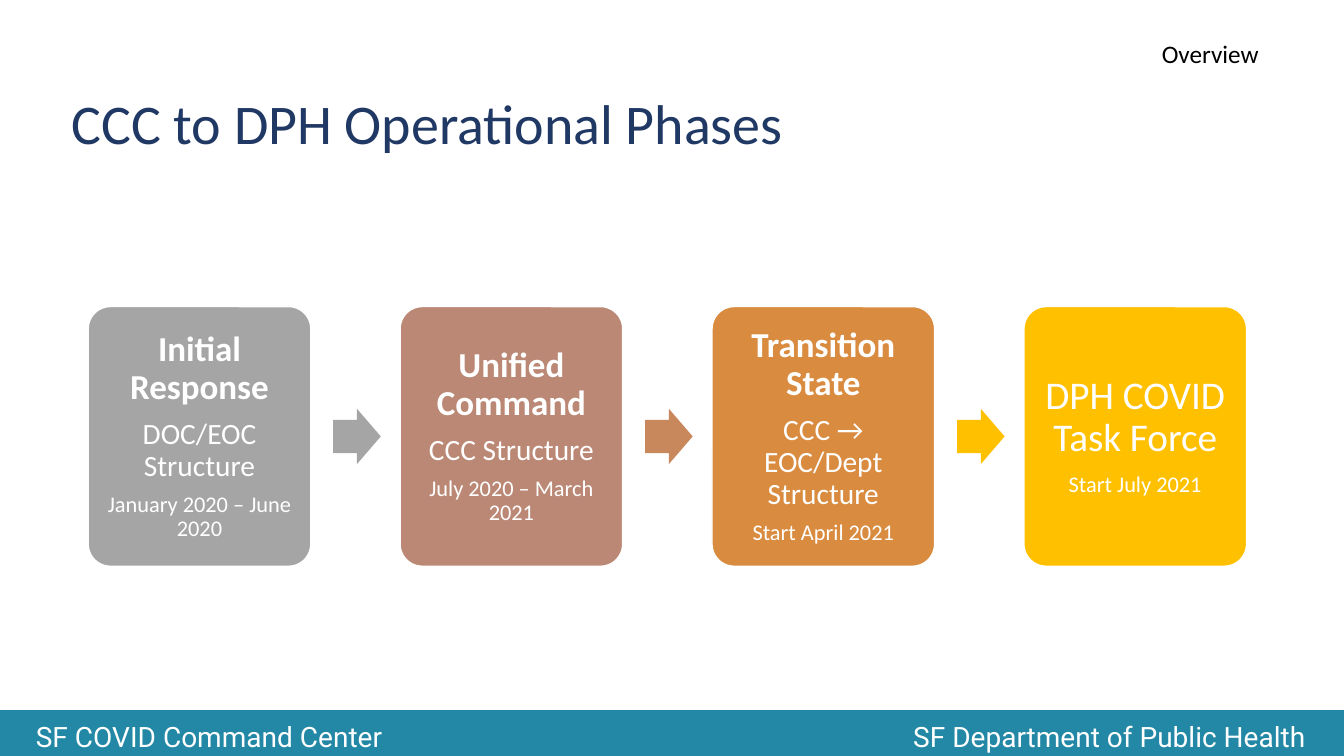
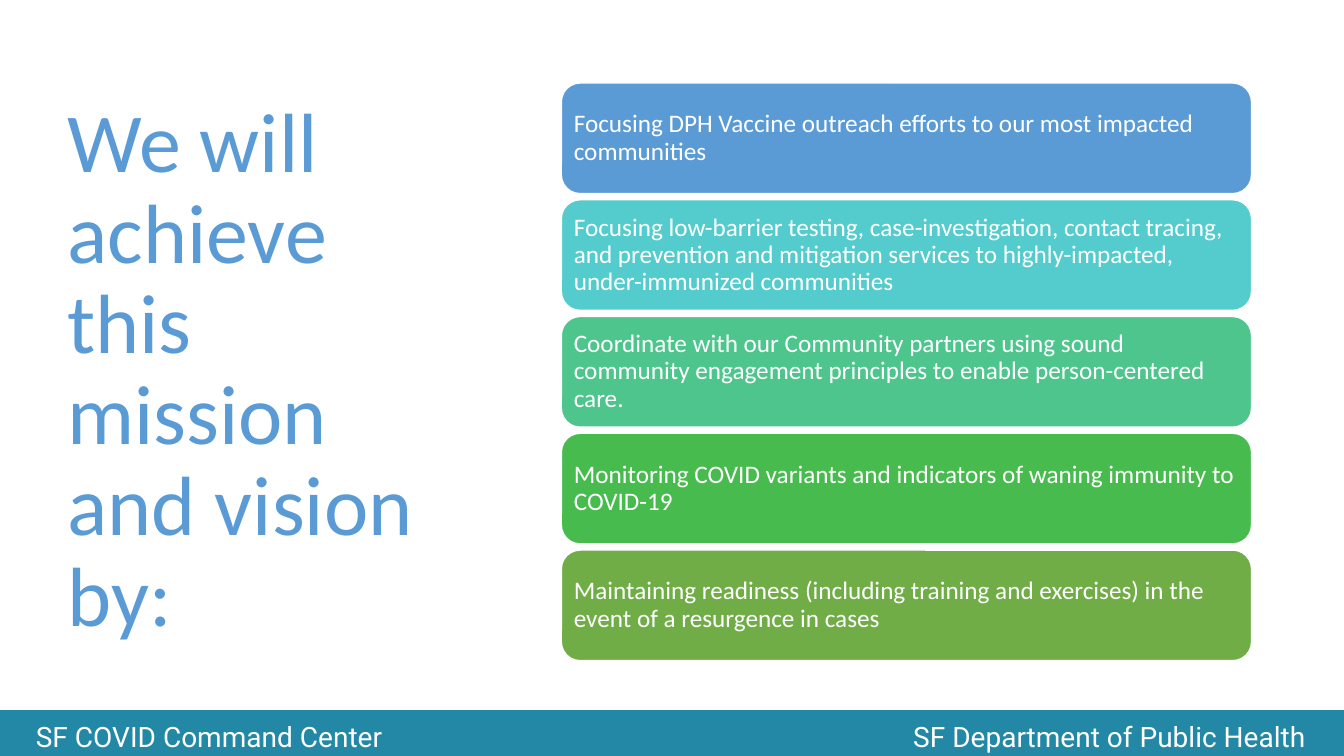
from lxml import etree
from pptx import Presentation
from pptx.dml.color import RGBColor
from pptx.enum.shapes import MSO_SHAPE as Preset
from pptx.enum.text import MSO_ANCHOR as Anchor, MSO_AUTO_SIZE as AutoSize, PP_ALIGN as Align
from pptx.oxml.ns import qn
from pptx.util import Pt

WHITE = RGBColor(0xFF, 0xFF, 0xFF)
BLACK = RGBColor(0x00, 0x00, 0x00)
NAVY = RGBColor(0x20, 0x38, 0x64)
TEAL = RGBColor(0x22, 0x88, 0xA5)
GRAY = RGBColor(0xA5, 0xA5, 0xA5)
ROSE = RGBColor(0xBB, 0x88, 0x76)
COPPER = RGBColor(0xC9, 0x87, 0x5C)
ORANGE = RGBColor(0xD9, 0x8B, 0x3F)
GOLD = RGBColor(0xFF, 0xC0, 0x00)
BLUE = RGBColor(0x5B, 0x9B, 0xD5)
AQUA = RGBColor(0x54, 0xCC, 0xCD)
MINT = RGBColor(0x4D, 0xC5, 0x8D)
GREEN = RGBColor(0x48, 0xBB, 0x4F)
OLIVE = RGBColor(0x70, 0xAD, 0x47)

TITLE_ONLY = 5

# Each phase: fill, colour of the arrow that follows, inset, (text, size, bold) lines
PHASES = [
    (GRAY, GRAY, 7.2, [("Initial Response", 25, True), ("DOC/EOC Structure", 21, False),
                       ("January 2020 – June 2020", 16, False)]),
    (ROSE, COPPER, 7.2, [("Unified Command", 25, True), ("CCC Structure", 21, False),
                         ("July 2020 – March 2021", 16, False)]),
    (ORANGE, GOLD, 7.2, [("Transition State", 25, True), ("CCC → EOC/Dept Structure", 21, False),
                         ("Start April 2021", 16, False)]),
    (GOLD, None, 8.6, [("DPH COVID Task Force", 28, False), ("Start July 2021", 16, False)]),
]

ACTIONS = [
    (BLUE, "Focusing DPH Vaccine outreach efforts to our most impacted communities"),
    (AQUA, "Focusing low-barrier testing, case-investigation, contact tracing, and prevention "
           "and mitigation services to highly-impacted, under-immunized communities"),
    (MINT, "Coordinate with our Community partners using sound community engagement principles "
           "to enable person-centered care."),
    (GREEN, "Monitoring COVID variants and indicators of waning immunity to COVID-19"),
    (OLIVE, "Maintaining readiness (including training and exercises) in the event of a "
            "resurgence in cases"),
]


class Deck:
    """Holds the shared style and the slide being built."""

    font = "Calibri"
    footer_font = "Roboto"

    def __init__(self):
        self.presentation = Presentation()
        self.presentation.slide_width = Pt(960)
        self.presentation.slide_height = Pt(540)
        self.slide = None

    def add_slide(self):
        layout = self.presentation.slide_layouts[TITLE_ONLY]
        self.slide = self.presentation.slides.add_slide(layout)
        self.footer()

    def style(self, paragraph, size, color, bold=False, align=Align.LEFT, font=None):
        paragraph.alignment = align
        for run in paragraph.runs:
            run.font.name = font or self.font
            run.font.size = Pt(size)
            run.font.bold = bold
            run.font.color.rgb = color

    def frame(self, shape, anchor, inset=None):
        """Set wrapping, anchor and, when given, one inset for all sides."""
        frame = shape.text_frame
        frame.word_wrap = True
        frame.auto_size = AutoSize.NONE
        frame.vertical_anchor = anchor
        if inset is not None:
            frame.margin_left = frame.margin_right = Pt(inset)
            frame.margin_top = frame.margin_bottom = Pt(inset)
        return frame

    def block(self, preset, left, top, width, height, fill, line=None, line_width=1):
        shape = self.slide.shapes.add_shape(preset, Pt(left), Pt(top), Pt(width), Pt(height))
        shape.shadow.inherit = False
        shape.fill.solid()
        shape.fill.fore_color.rgb = fill
        if line is None:
            shape.line.fill.background()
        else:
            shape.line.color.rgb = line
            shape.line.width = Pt(line_width)
        return shape

    def footer(self):
        band = self.block(Preset.RECTANGLE, -1.4, 507.6, 963.4, 36, TEAL, TEAL, 0.75)
        frame = self.frame(band, Anchor.MIDDLE)
        frame.margin_left = frame.margin_right = Pt(27)
        paragraph = frame.paragraphs[0]
        paragraph.text = "SF COVID Command Center\tSF Department of Public Health"
        tabs = etree.SubElement(paragraph._p.get_or_add_pPr(), qn("a:tabLst"))
        etree.SubElement(tabs, qn("a:tab"), pos=str(Pt(907)), algn="r")
        self.style(paragraph, 20, WHITE, font=self.footer_font)

    def title(self, text, left, top, width, height, size, color, anchor, spacing):
        title = self.slide.shapes.title
        title.left, title.top, title.width, title.height = map(Pt, (left, top, width, height))
        frame = self.frame(title, anchor)
        frame.text = text
        frame.paragraphs[0].line_spacing = spacing
        self.style(frame.paragraphs[0], size, color)

    def label(self, text, left, top, width, height, size, color):
        box = self.slide.shapes.add_textbox(Pt(left), Pt(top), Pt(width), Pt(height))
        frame = self.frame(box, Anchor.TOP)
        frame.text = text
        self.style(frame.paragraphs[0], size, color, align=Align.CENTER)

    def card(self, left, top, width, height, fill, lines, corner, inset, align=Align.LEFT):
        """Draw a rounded box holding (text, size, bold) lines."""
        card = self.block(Preset.ROUNDED_RECTANGLE, left, top, width, height, fill, WHITE)
        card.adjustments[0] = corner
        frame = self.frame(card, Anchor.MIDDLE, inset)
        frame.text = "\n".join(text for text, _, _ in lines)
        for paragraph, (_, size, bold) in zip(frame.paragraphs, lines):
            paragraph.line_spacing = 0.9
            paragraph.space_after = Pt(0.35 * size)
            self.style(paragraph, size, WHITE, bold, align)

    def arrow(self, left, top, width, height, fill):
        arrow = self.block(Preset.RIGHT_ARROW, left, top, width, height, fill)
        arrow.adjustments[0] = 0.6
        arrow.adjustments[1] = 0.5


def add_phases_slide(deck):
    deck.add_slide()
    deck.title("CCC to DPH Operational Phases", 44, 59.8, 708, 55.4, 40, NAVY, Anchor.TOP, 1.0)
    deck.label("Overview", 795, 23.8, 139, 29, 18, BLACK)
    for index, (fill, arrow_fill, inset, lines) in enumerate(PHASES):
        left = 63 + index * 222.8
        deck.card(left, 219, 159, 185.5, fill, lines, 0.1, inset, Align.CENTER)
        if arrow_fill is not None:
            deck.arrow(left + 175, 292, 34, 39.5, arrow_fill)


def add_actions_slide(deck):
    deck.add_slide()
    deck.title("We will achieve this mission and vision by:", 41, 49, 299.5, 433.5, 60, BLUE,
               Anchor.MIDDLE, 0.9)
    for index, (fill, text) in enumerate(ACTIONS):
        deck.card(401, 59.3 + index * 83.4, 493, 79, fill, [(text, 18, False)], 0.17, 5)


def main():
    deck = Deck()
    add_phases_slide(deck)
    add_actions_slide(deck)
    deck.presentation.save("out.pptx")


if __name__ == "__main__":
    main()
